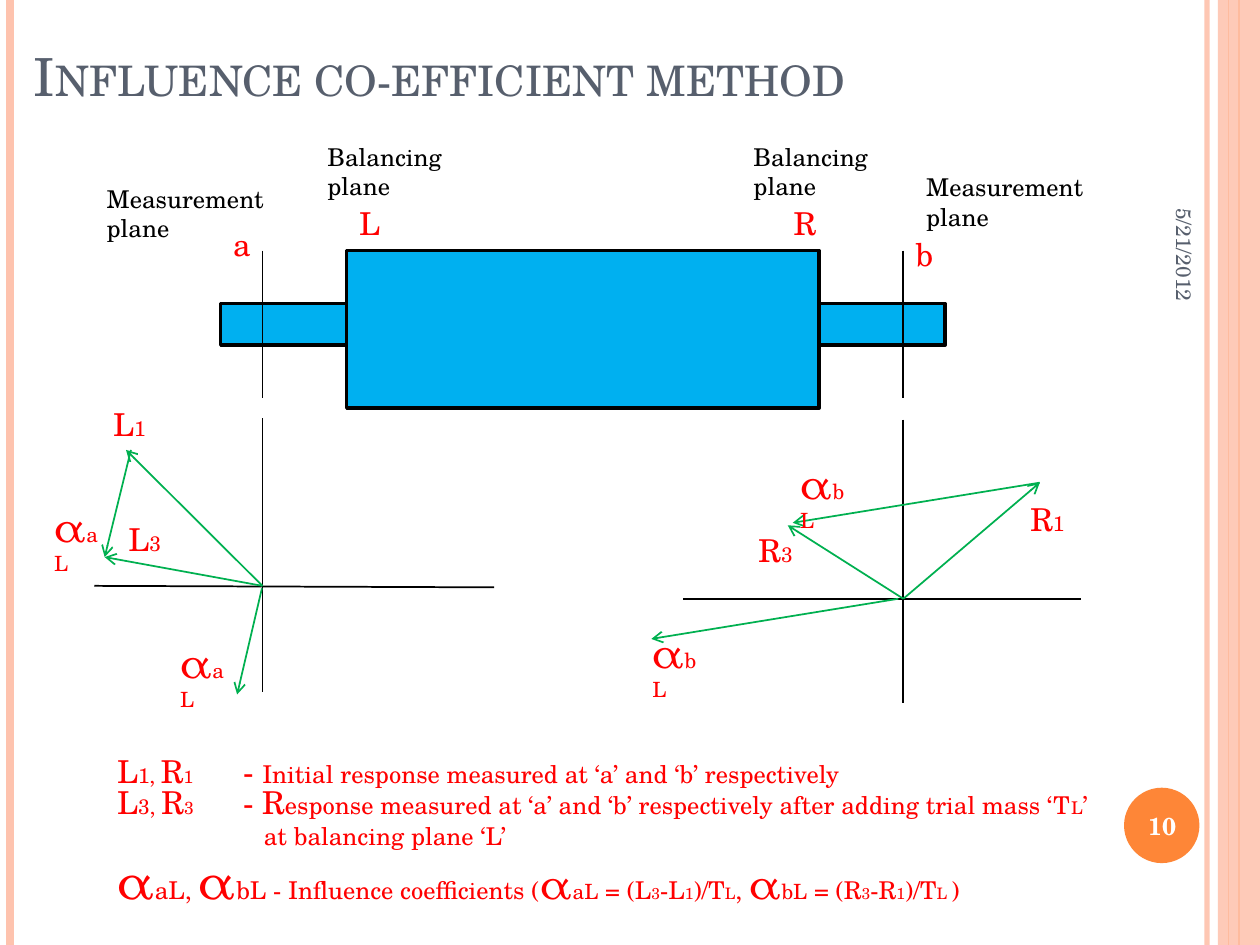
from lxml import etree
from pptx import Presentation
from pptx.dml.color import RGBColor
from pptx.enum.shapes import MSO_CONNECTOR, MSO_SHAPE
from pptx.enum.text import MSO_ANCHOR, MSO_AUTO_SIZE, PP_ALIGN
from pptx.oxml.ns import qn
from pptx.util import Cm, Pt

STRAIGHT = MSO_CONNECTOR.STRAIGHT
RECTANGLE, OVAL = MSO_SHAPE.RECTANGLE, MSO_SHAPE.OVAL
TOP, MIDDLE = MSO_ANCHOR.TOP, MSO_ANCHOR.MIDDLE
LEFT, CENTER, RIGHT = PP_ALIGN.LEFT, PP_ALIGN.CENTER, PP_ALIGN.RIGHT
NO_FIT, GROW = MSO_AUTO_SIZE.NONE, MSO_AUTO_SIZE.SHAPE_TO_FIT_TEXT


class Theme:
    font = "TeX Gyre Schola"
    slate = RGBColor.from_string("575F6D")
    orange = RGBColor.from_string("FE8637")
    peach = RGBColor.from_string("FEC3AE")
    steel = RGBColor.from_string("00B0F0")
    vector = RGBColor.from_string("00B050")
    symbol = RGBColor.from_string("FF0000")
    black = RGBColor.from_string("000000")
    white = RGBColor.from_string("FFFFFF")
    title, large_alpha, alpha, letter = 30, 28, 24, 18
    body, subscript, small, tiny = 14, 12, 10, 9


def add_line(shapes, start, end, color, width=1, arrow=False, opacity=100):
    line = shapes.add_connector(STRAIGHT, *map(Cm, start + end))
    line.line.color.rgb = color
    line.line.width = Pt(width)
    properties = line._element.spPr
    outline = properties.find(qn("a:ln"))
    if opacity < 100:
        tint = outline.find(".//" + qn("a:srgbClr"))
        etree.SubElement(tint, qn("a:alpha"), val=str(opacity * 1000))
    if arrow:
        etree.SubElement(outline, qn("a:tailEnd"), type="arrow")
    etree.SubElement(properties, qn("a:effectLst"))


def add_text(shapes, box, paragraphs, color, wrap=False, fit=GROW,
             anchor=TOP, align=LEFT, bold=False):
    """Each paragraph is a list of (text, size) runs."""
    text_box = shapes.add_textbox(*map(Cm, box))
    frame = text_box.text_frame
    frame.word_wrap, frame.auto_size, frame.vertical_anchor = wrap, fit, anchor
    for index, runs in enumerate(paragraphs):
        paragraph = frame.add_paragraph() if index else frame.paragraphs[0]
        paragraph.alignment = align
        for text, size in runs:
            run = paragraph.add_run()
            run.text = text
            run.font.name, run.font.size = Theme.font, Pt(size)
            run.font.color.rgb, run.font.bold = color, bold
    return text_box


presentation = Presentation()
presentation.slide_width, presentation.slide_height = Cm(25.4), Cm(19.05)
slide = presentation.slides.add_slide(presentation.slide_layouts[5])
shapes = slide.shapes

# Side stripes and page badge
for x, color, width, opacity in [
    (24.33, Theme.peach, 3, 93), (0.21, Theme.peach, 4.5, 100),
    (24.98, Theme.orange, 1.5, 100), (24.77, Theme.orange, 0.75, 100),
]:
    add_line(shapes, (x, 0), (x, 19.05), color, width, opacity=opacity)

for kind, box, color, opacity in [
    (RECTANGLE, (24.55, 0, 0.85, 19.05), Theme.peach, 87),
    (OVAL, (22.66, 15.88, 1.52, 1.52), Theme.orange, 100),
]:
    shape = shapes.add_shape(kind, *map(Cm, box))
    shape.shadow.inherit = False
    shape.fill.solid()
    shape.fill.fore_color.rgb = color
    shape.line.fill.background()
    if opacity < 100:
        tint = shape._element.spPr.find(".//" + qn("a:srgbClr"))
        etree.SubElement(tint, qn("a:alpha"), val=str(opacity * 1000))

# Title
title = shapes.title
title.left, title.top, title.width, title.height = map(Cm, (0.43, 0.76, 20.75, 3.18))
title.text_frame.vertical_anchor = TOP
title.text_frame.auto_size = NO_FIT
paragraph = title.text_frame.paragraphs[0]
paragraph.alignment = LEFT
run = paragraph.add_run()
run.text = "Influence co-efficient method"
run.font.name, run.font.size = Theme.font, Pt(Theme.title)
run.font.color.rgb = Theme.slate
run._r.get_or_add_rPr().set("cap", "small")

# Date and page number
date = add_text(shapes, (21.08, 3, 5.59, 1.07), [[("5/21/2012", Theme.subscript)]],
                Theme.slate, True, NO_FIT, MIDDLE, RIGHT)
date.rotation = 90
add_text(shapes, (22.58, 15.93, 1.7, 1.45), [[("10", Theme.body)]],
         Theme.white, True, NO_FIT, MIDDLE, CENTER, True)

# Rotor with its measurement planes
plane_a, plane_b = 5.29, 18.21
rotor = shapes.add_group_shape().shapes
for box in [(6.99, 5.05, 9.52, 3.18), (4.45, 6.12, 2.54, 0.84),
            (16.51, 6.12, 2.54, 0.84)]:
    part = rotor.add_shape(RECTANGLE, *map(Cm, box))
    part.shadow.inherit = False
    part.fill.solid()
    part.fill.fore_color.rgb = Theme.steel
    part.line.color.rgb = Theme.black
    part.line.width = Pt(2)
for x in (plane_a, plane_b):
    add_line(rotor, (x, 5.05), (x, 8.03), Theme.black)
for letter, x, y in [("a", 4.45, 4.42), ("b", 18.21, 4.62),
                     ("L", 6.99, 3.99), ("R", 15.75, 3.99)]:
    add_text(rotor, (x, y, 0.92, 1.02), [[(letter, Theme.letter)]], Theme.symbol)
for name, x, y, width in [
    ("Measurement", 1.9, 3.58, 3.71), ("Measurement", 18.42, 3.35, 3.71),
    ("Balancing", 6.35, 2.74, 2.84), ("Balancing", 14.94, 2.74, 2.84),
]:
    add_text(rotor, (x, y, width, 1.45),
             [[(name, Theme.body)], [("plane", Theme.body)]], Theme.black)

# Vector diagrams: axes, vectors, then labels
origin_a, origin_b = (plane_a, 11.81), (plane_b, 12.07)
diagrams = [
    ([((plane_a, 8.43), (plane_a, 13.94)), ((1.9, 11.81), (9.96, 11.84))],
     [(origin_a, (2.54, 9.07)), (origin_a, (2.11, 11.23))],
     [("L", "1", 2.03, 8.05), ("L", "3", 2.34, 10.36),
      ("α", "aL", 0.84, 9.96), ("α", "aL", 3.38, 12.7)]),
    ([((plane_b, 8.46), (plane_b, 14.17)), ((13.77, 12.07), (21.79, 12.07))],
     [(origin_b, (20.96, 9.73)), (origin_b, (15.88, 10.59)),
      ((20.96, 9.73), (15.98, 10.54)), ((18.11, 12.07), (13.13, 12.88))],
     [("R", "1", 20.52, 9.96), ("R", "3", 15.04, 10.59),
      ("α", "bL", 15.88, 9.09), ("α", "bL", 12.9, 12.5)]),
]
for axes, vectors, labels in diagrams:
    diagram = shapes.add_group_shape().shapes
    for start, end in axes:
        add_line(diagram, start, end, Theme.black)
    for start, end in vectors:
        add_line(diagram, start, end, Theme.vector, arrow=True)
    for letter, index, x, y in labels:
        is_alpha = letter == "α"
        size = Theme.alpha if is_alpha else Theme.letter
        width, height = (1.52, 1.27) if is_alpha else (1.22, 1.02)
        add_text(diagram, (x, y, width, height),
                 [[(letter, size), (index, Theme.subscript)]], Theme.symbol, wrap=is_alpha)

# Legend
letter, body, subscript = Theme.letter, Theme.body, Theme.subscript
small, tiny = Theme.small, Theme.tiny
add_text(shapes, (2.11, 15.04, 15.34, 1.02), [[
    ("L", letter), ("1, ", subscript), ("R", letter), ("1\t", small), ("- ", letter),
    ("Initial response measured at ‘a’ and ‘b’ respectively", body),
]], Theme.symbol)

formulas = [("α", Theme.large_alpha), ("aL, ", body), ("α", Theme.large_alpha),
            ("bL - Influence coefficients (", body)]
for plane, response, ending in [("a", "L", [("L", tiny), (", ", body)]),
                                ("b", "R", [("L ", tiny), (")", body)])]:
    formulas += [("α", Theme.alpha), (plane + "L", subscript), (f" = ({response}", body),
                 ("3", tiny), (f"-{response}", body), ("1", tiny), (")/T", body)] + ending
legend = add_text(shapes, (2.11, 15.67, 20.22, 2.82), [
    [("L", letter), ("3, ", subscript), ("R", letter), ("3\t", small), ("- R", letter),
     ("esponse measured at ‘a’ and ‘b’ respectively after adding trial mass ‘T", body),
     ("L", small), ("’", body)],
    [("at balancing plane ‘L’", body)],
    formulas,
], Theme.symbol)
continuation = legend.text_frame.paragraphs[1]._p.get_or_add_pPr()
continuation.set("marL", str(Cm(2.96)))
continuation.set("indent", "0")

# Trial mass effect at plane a
for start, end in [((2.64, 9.07), (2.11, 11.23)), ((5.28, 11.86), (4.78, 14))]:
    add_line(shapes, start, end, Theme.vector, arrow=True)

presentation.save("out.pptx")
